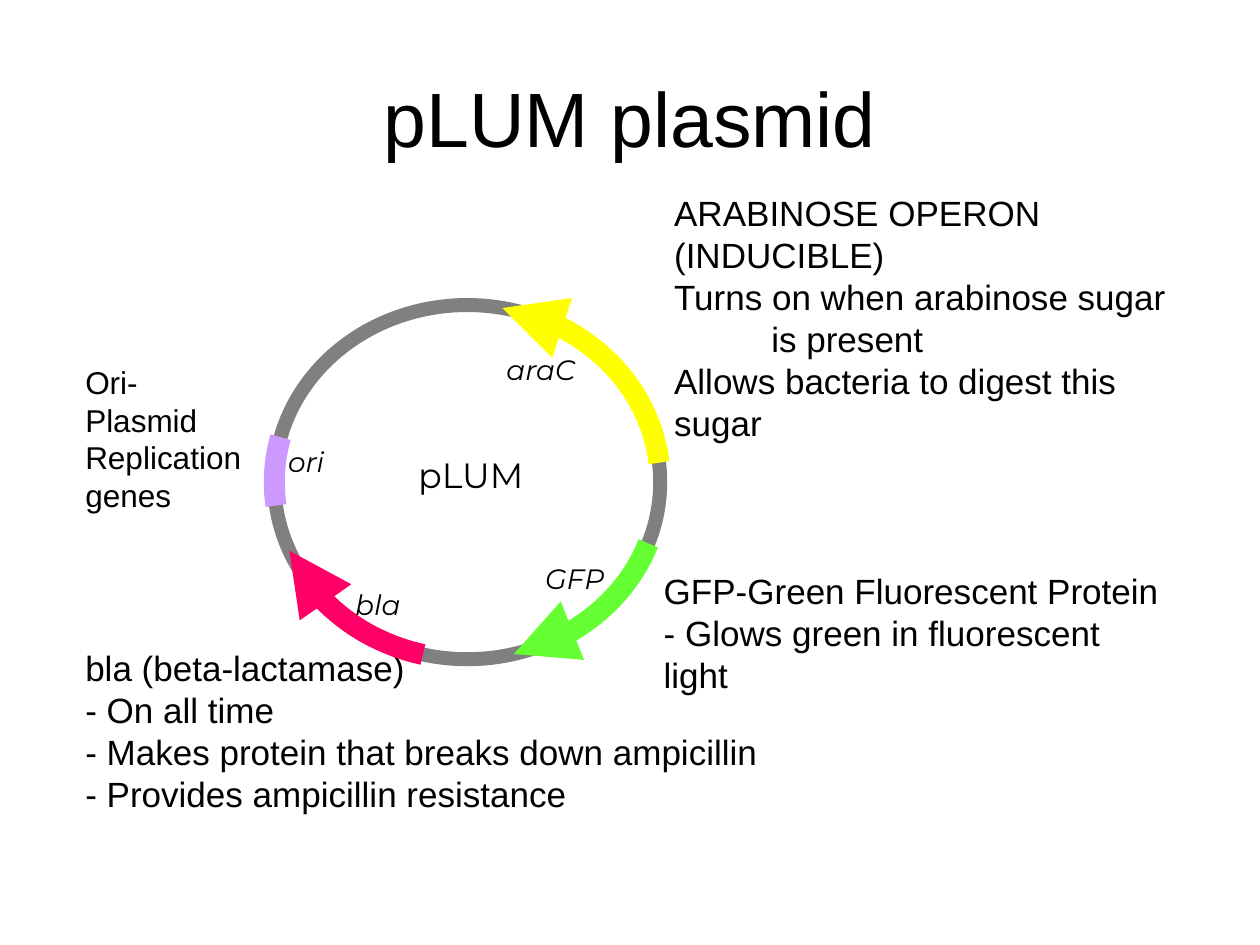
from math import cos, radians, sin

from lxml import etree
from pptx import Presentation
from pptx.dml.color import RGBColor
from pptx.enum.shapes import MSO_SHAPE
from pptx.enum.text import MSO_ANCHOR, PP_ALIGN
from pptx.oxml.ns import qn
from pptx.util import Cm, Pt

OVAL = MSO_SHAPE.OVAL
MIDDLE, TOP = MSO_ANCHOR.MIDDLE, MSO_ANCHOR.TOP
CENTER, LEFT = PP_ALIGN.CENTER, PP_ALIGN.LEFT

COLORS = {
    "text": "000000",
    "ring": "808080",
    "araC": "FFFF00",
    "GFP": "66FF33",
    "bla": "FF0066",
    "ori": "CC99FF",
}
BODY_FONT, MAP_FONT = "Arial", "Montserrat"

# Plasmid ring, in cm
CENTER_X, CENTER_Y = 9.42, 9.72
RADIUS_X, RADIUS_Y = 3.89, 3.57
ARC_STEPS = 24

# Gene, start and end angle (clockwise from the right), has arrowhead
GENES = [
    ("araC", -6.3, -79.5, True),
    ("GFP", 20.2, 76, True),
    ("bla", 103.3, 157.2, True),
    ("ori", 172.4, 194.7, False),
]

# Gene label: left, top, width in cm
GENE_LABELS = {
    "ori": (5.56, 8.84, 1.68),
    "bla": (6.91, 11.71, 1.68),
    "GFP": (10.74, 11.2, 1.88),
    "araC": (9.96, 6.99, 2.08),
}

BLA_NOTES = [
    "bla (beta-lactamase)",
    "- On all time",
    "- Makes protein that breaks down ampicillin",
    "- Provides ampicillin resistance",
]
GFP_NOTES = ["GFP-Green Fluorescent Protein", "- Glows green in fluorescent light"]
OPERON_NOTES = [
    "ARABINOSE OPERON",
    "(INDUCIBLE)",
    "Turns on when arabinose sugar\vis present",
    "Allows bacteria to digest this sugar",
]
ORI_NOTES = ["Ori-", "Plasmid", "Replication", "genes"]


class PlasmidSlide:
    def __init__(self, presentation):
        self.slide = presentation.slides.add_slide(presentation.slide_layouts[5])

    def format_paragraph(self, paragraph, size, font=BODY_FONT, italic=False, align=LEFT):
        paragraph.alignment = align
        paragraph.font.name = font
        paragraph.font.size = Pt(size)
        paragraph.font.italic = italic
        paragraph.font.color.rgb = RGBColor.from_string(COLORS["text"])

    def title(self, text, left, top, width, height):
        title = self.slide.shapes.title
        title.left, title.top, title.width, title.height = map(Cm, (left, top, width, height))
        title.text_frame.text = text
        title.text_frame.vertical_anchor = MIDDLE
        self.format_paragraph(title.text_frame.paragraphs[0], 44, align=CENTER)

    def text(self, lines, left, top, width, height, size=20, wrap=True, **style):
        """Add a text box and return its paragraphs."""
        box = self.slide.shapes.add_textbox(*map(Cm, (left, top, width, height)))
        frame = box.text_frame
        frame.word_wrap = wrap
        frame.vertical_anchor = TOP
        frame.text = "\n".join(lines)
        for paragraph in frame.paragraphs:
            self.format_paragraph(paragraph, size, **style)
        return frame.paragraphs

    def hang(self, paragraph, indent):
        """Indent every line of the paragraph but the first."""
        properties = paragraph._p.get_or_add_pPr()
        properties.set("marL", str(Cm(indent)))
        properties.set("indent", str(-Cm(indent)))

    def outline(self, shape, color, width):
        shape.shadow.inherit = False
        shape.fill.background()
        shape.line.color.rgb = RGBColor.from_string(COLORS[color])
        shape.line.width = Pt(width)

    def ring(self):
        ring = self.slide.shapes.add_shape(
            OVAL, Cm(CENTER_X - RADIUS_X), Cm(CENTER_Y - RADIUS_Y),
            Cm(2 * RADIUS_X), Cm(2 * RADIUS_Y))
        self.outline(ring, "ring", 8)

    def gene(self, name, start, end, has_arrow):
        """Draw a gene as a thick arc that follows the ring."""
        angles = [radians(start + (end - start) * step / ARC_STEPS)
                  for step in range(ARC_STEPS + 1)]
        points = [(Cm(CENTER_X + RADIUS_X * cos(angle)), Cm(CENTER_Y + RADIUS_Y * sin(angle)))
                  for angle in angles]
        builder = self.slide.shapes.build_freeform(*points[0])
        builder.add_line_segments(points[1:], close=False)
        arc = builder.convert_to_shape()
        self.outline(arc, name, 12)
        line = arc.line._get_or_add_ln()
        etree.SubElement(line, qn("a:round"))
        if has_arrow:
            etree.SubElement(line, qn("a:tailEnd"), type="triangle")


def main():
    presentation = Presentation()
    presentation.slide_width, presentation.slide_height = Cm(25.4), Cm(19.05)
    page = PlasmidSlide(presentation)

    page.title("pLUM plasmid", 1.27, 0.76, 22.86, 3.18)
    page.text(BLA_NOTES, 1.47, 12.9, 16.31, 4.5)
    page.text(GFP_NOTES, 13.13, 11.35, 10.77, 2.79)
    operon = page.text(OPERON_NOTES, 13.34, 3.73, 11.38, 5.33)
    page.hang(operon[2], 1.96)

    page.ring()
    page.text(["pLUM"], 8.18, 9.02, 2.69, 1.09, font=MAP_FONT)
    for gene in GENES:
        page.gene(*gene)
    for name, (left, top, width) in GENE_LABELS.items():
        page.text([name], left, top, width, 0.94, size=16, font=MAP_FONT, italic=True)

    page.text(ORI_NOTES, 1.47, 7.19, 3.66, 3.3, size=18, wrap=False)
    presentation.save("out.pptx")


if __name__ == "__main__":
    main()
